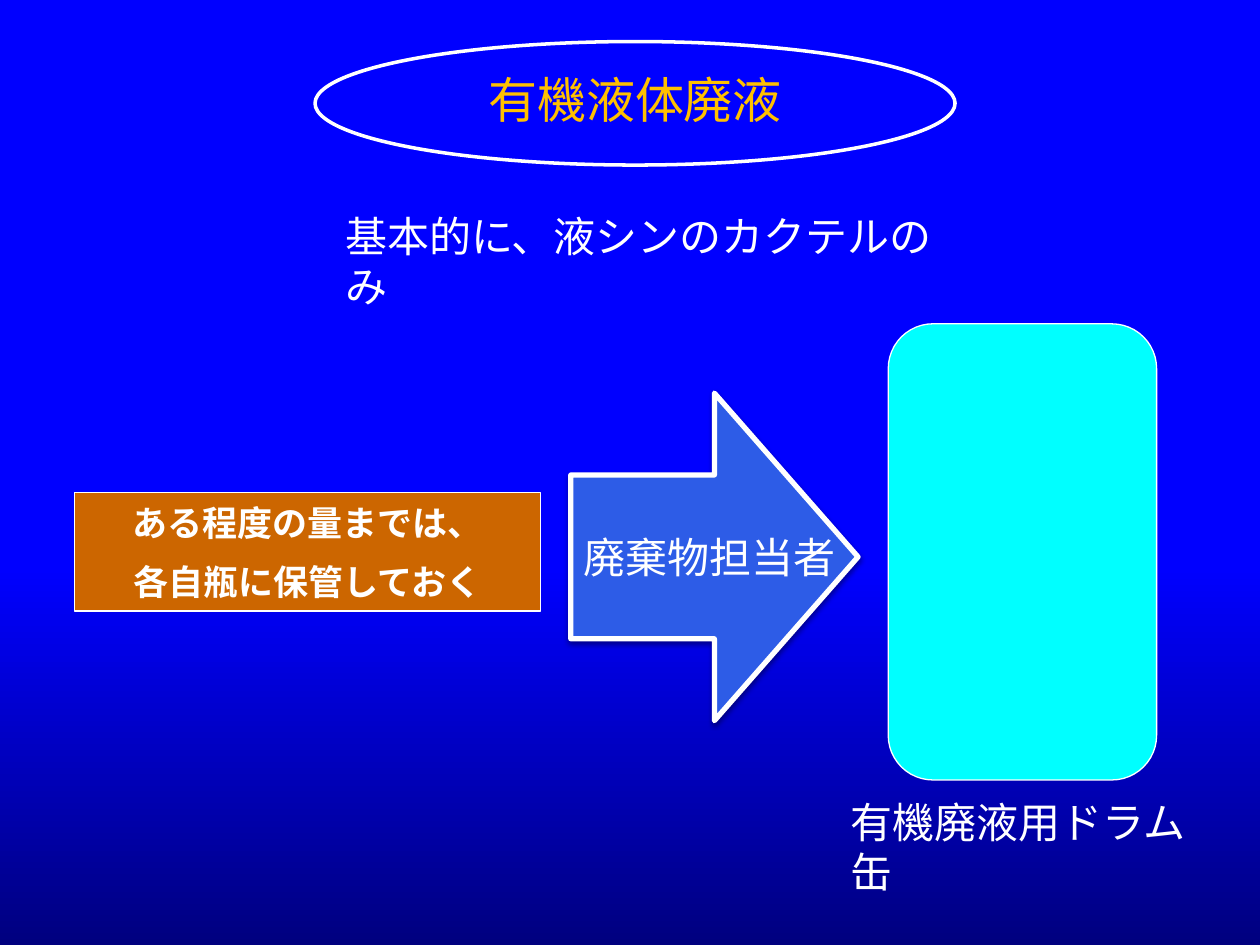
from dataclasses import dataclass

from lxml.etree import SubElement
from pptx import Presentation
from pptx.dml.color import RGBColor as Rgb
from pptx.enum.shapes import MSO_SHAPE as Shape
from pptx.enum.text import MSO_ANCHOR as Anchor, MSO_AUTO_SIZE as AutoSize, PP_ALIGN as Align
from pptx.oxml.ns import qn
from pptx.util import Inches, Pt


@dataclass(frozen=True)
class Theme:
    night: str = "00007F"
    blue: str = "0000FF"
    white: str = "FFFFFF"
    gold: str = "FFC000"
    cyan: str = "00FFFF"
    orange: str = "CC6600"
    royal: str = "2D5CE7"
    shadow: str = "000000"
    serif: str = "Times New Roman"
    sans: str = "Noto Sans CJK JP"
    title_size: int = 28
    body_size: int = 24
    note_size: int = 20


def place(box):
    return [Inches(length) for length in box]


class SlideBuilder:
    def __init__(self, slide, theme):
        self.slide = slide
        self.theme = theme

    def background(self):
        """Fade from dark at the bottom edge to plain blue at 40 percent."""
        fill = self.slide.background.fill
        fill.gradient()
        fill.gradient_angle = 90
        colors = (self.theme.night, self.theme.blue)
        for stop, position, color in zip(fill.gradient_stops, (0, 0.4), colors):
            stop.position = position
            stop.color.rgb = Rgb.from_string(color)

    def set_text(self, shape, text, size, color=None, font=None, bold=False,
                 align=Align.LEFT, anchor=Anchor.TOP, wrap=True):
        frame = shape.text_frame
        frame.text = text
        frame.word_wrap = wrap
        frame.auto_size = AutoSize.NONE
        frame.vertical_anchor = anchor
        frame.margin_left = frame.margin_right = Inches(0.1)
        frame.margin_top = frame.margin_bottom = Inches(0.05)
        for index, paragraph in enumerate(frame.paragraphs):
            paragraph.alignment = align
            paragraph.space_before = Pt(size / 2 if index else 0)
            for run in paragraph.runs:
                run.font.size = Pt(size)
                run.font.bold = bold
                run.font.name = font or self.theme.serif
                run.font.color.rgb = Rgb.from_string(color or self.theme.white)

    def title(self, box, text):
        heading = self.slide.shapes.title
        heading.left, heading.top, heading.width, heading.height = place(box)
        self.set_text(heading, text, self.theme.title_size, self.theme.gold, align=Align.CENTER)

    def label(self, box, text):
        caption = self.slide.shapes.add_textbox(*place(box))
        self.set_text(caption, text, self.theme.body_size)

    def shape(self, kind, box, fill=None, line_width=0.75):
        shape = self.slide.shapes.add_shape(kind, *place(box))
        shape.shadow.inherit = False
        if fill:
            shape.fill.solid()
            shape.fill.fore_color.rgb = Rgb.from_string(fill)
        else:
            shape.fill.background()
        shape.line.color.rgb = Rgb.from_string(self.theme.white)
        shape.line.width = Pt(line_width)
        return shape

    def drop_shadow(self, shape, blur, distance, opacity):
        """Cast a shadow straight down; opacity is in percent."""
        effects = shape.element.spPr.find(qn("a:effectLst"))
        shadow = SubElement(effects, qn("a:outerShdw"), blurRad=str(Pt(blur)),
                            dist=str(Pt(distance)), dir=str(90 * 60000), rotWithShape="0")
        color = SubElement(shadow, qn("a:srgbClr"), val=self.theme.shadow)
        SubElement(color, qn("a:alpha"), val=str(opacity * 1000))


def main():
    theme = Theme()
    deck = Presentation()
    deck.slide_width, deck.slide_height = Inches(10), Inches(7.5)
    page = SlideBuilder(deck.slides.add_slide(deck.slide_layouts[5]), theme)

    page.background()
    page.title((2.75, 0.5, 4.58, 0.57), "有機液体廃液")
    page.shape(Shape.OVAL, (2.5, 0.33, 5.08, 0.98), line_width=2)
    page.shape(Shape.ROUNDED_RECTANGLE, (7.05, 2.57, 2.13, 3.62), theme.cyan)
    page.label((6.65, 6.27, 3.06, 0.5), "有機廃液用ドラム缶")
    page.label((2.64, 1.62, 4.88, 0.51), "基本的に、液シンのカクテルのみ")

    storage = page.shape(Shape.RECTANGLE, (0.59, 3.91, 3.7, 0.94), theme.orange)
    page.set_text(storage, "ある程度の量までは、\n各自瓶に保管しておく", theme.note_size,
                  font=theme.sans, bold=True, align=Align.CENTER, anchor=Anchor.MIDDLE)

    handover = page.shape(Shape.RIGHT_ARROW, (4.53, 3.12, 2.28, 2.6), theme.royal, 3)
    page.drop_shadow(handover, blur=3.1, distance=1.6, opacity=38)
    page.set_text(handover, "廃棄物担当者", theme.body_size, anchor=Anchor.MIDDLE, wrap=False)

    deck.save("out.pptx")


if __name__ == "__main__":
    main()
